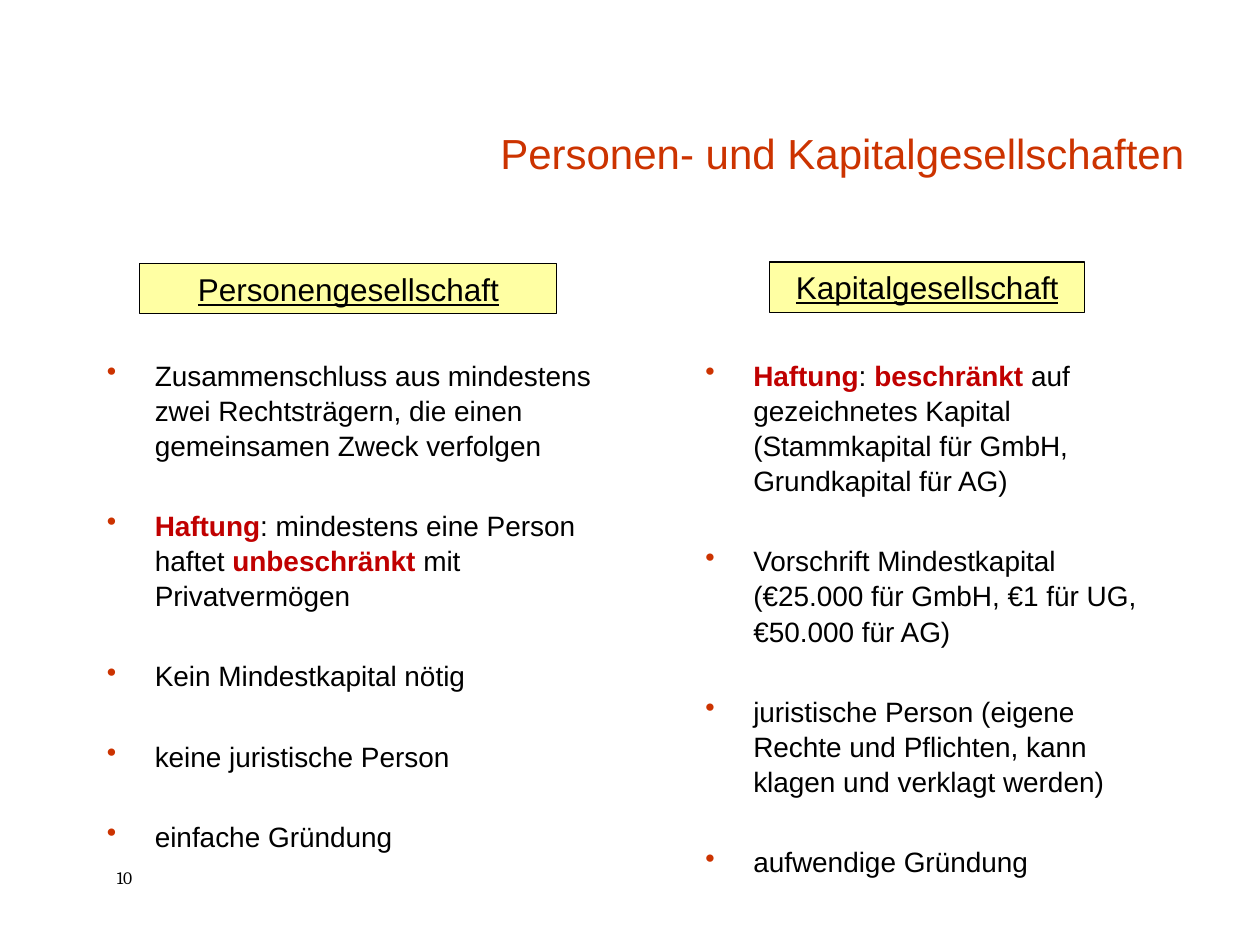
"""Build a slide comparing partnerships and corporations in two columns."""
from lxml import etree
from pptx import Presentation
from pptx.dml.color import RGBColor
from pptx.enum.shapes import MSO_SHAPE
from pptx.enum.text import MSO_ANCHOR, MSO_AUTO_SIZE, PP_ALIGN
from pptx.oxml.ns import qn
from pptx.util import Inches, Pt

RECTANGLE = MSO_SHAPE.RECTANGLE
BOTTOM, MIDDLE = MSO_ANCHOR.BOTTOM, MSO_ANCHOR.MIDDLE
RIGHT, CENTER = PP_ALIGN.RIGHT, PP_ALIGN.CENTER
NO_FIT = MSO_AUTO_SIZE.NONE

BLACK, ORANGE, RED, YELLOW = "000000", "CC3300", "C00000", "FFFFA3"


def rgb(value):
    return RGBColor.from_string(value)


def add_run(paragraph, text, size, colour=BLACK, face="Arial"):
    run = paragraph.add_run()
    run.text = text
    run.font.size = Pt(size)
    run.font.name = face
    run.font.color.rgb = rgb(colour)
    return run


presentation = Presentation()
presentation.slide_width, presentation.slide_height = Inches(10), Inches(7.5)
slide = presentation.slides.add_slide(presentation.slide_layouts[5])

title = slide.shapes.title
title.left, title.top = Inches(2.09), Inches(0.42)
title.width, title.height = Inches(7.41), Inches(1.05)
title.text_frame.auto_size = NO_FIT
title.text_frame.word_wrap = True
title.text_frame.vertical_anchor = BOTTOM
headline = title.text_frame.paragraphs[0]
headline.alignment = RIGHT
headline.line_spacing = 0.9
add_run(headline, "Personen- und Kapitalgesellschaften", 24, ORANGE)

page_number = slide.shapes.add_textbox(Inches(0.83), Inches(6.83), Inches(0.67), Inches(0.29))
page_number.text_frame.word_wrap = True
add_run(page_number.text_frame.paragraphs[0], "10", 10, face="Cambria")

columns = [
    ("Personengesellschaft", (1.11, 2.09, 3.31), (0.75, 4.35, 3.31), [
        [("Zusammenschluss aus mindestens zwei Rechtsträgern, "
          "die einen gemeinsamen Zweck verfolgen", False)],
        [("Haftung", True), (": mindestens eine Person haftet ", False),
         ("unbeschränkt", True), (" mit Privatvermögen", False)],
        [("Kein Mindestkapital nötig", False)],
        [("keine juristische Person", False)],
        [("einfache Gründung", False)],
    ]),
    ("Kapitalgesellschaft", (6.11, 2.08, 2.5), (5.5, 3.78, 2.95), [
        [("Haftung", True), (": ", False), ("beschränkt", True),
         (" auf gezeichnetes Kapital (Stammkapital für GmbH, Grundkapital für AG)", False)],
        [("Vorschrift Mindestkapital (€25.000 für GmbH, €1 für UG, €50.000 für AG)", False)],
        [("juristische Person (eigene Rechte und Pflichten, "
          "kann klagen und verklagt werden)", False)],
        [("aufwendige Gründung", False)],
    ]),
]

for company_form, (head_left, head_top, head_width), (left, width, height), features in columns:
    heading = slide.shapes.add_shape(RECTANGLE, Inches(head_left), Inches(head_top),
                                     Inches(head_width), Inches(0.4))
    heading.shadow.inherit = False
    heading.fill.solid()
    heading.fill.fore_color.rgb = rgb(YELLOW)
    heading.line.color.rgb = rgb(BLACK)
    heading.line.width = Pt(0.75)
    heading.text_frame.vertical_anchor = MIDDLE
    heading_line = heading.text_frame.paragraphs[0]
    heading_line.alignment = CENTER
    add_run(heading_line, company_form, 18).font.underline = True

    feature_list = slide.shapes.add_textbox(Inches(left), Inches(2.78),
                                            Inches(width), Inches(height)).text_frame
    feature_list.word_wrap = True
    for position, feature in enumerate(features):
        item = feature_list.add_paragraph() if position else feature_list.paragraphs[0]
        properties = item._p.get_or_add_pPr()
        properties.set("marL", str(Inches(0.38)))
        properties.set("indent", str(-Inches(0.38)))
        bullet_colour = etree.SubElement(properties, qn("a:buClr"))
        etree.SubElement(bullet_colour, qn("a:srgbClr"), val=ORANGE)
        etree.SubElement(properties, qn("a:buChar"), char="•")
        item.line_spacing = 1.05
        item.space_before = Pt(25.6 if position else 0)
        for text, emphasised in feature:
            add_run(item, text, 16, RED if emphasised else BLACK).font.bold = emphasised

presentation.save("out.pptx")
